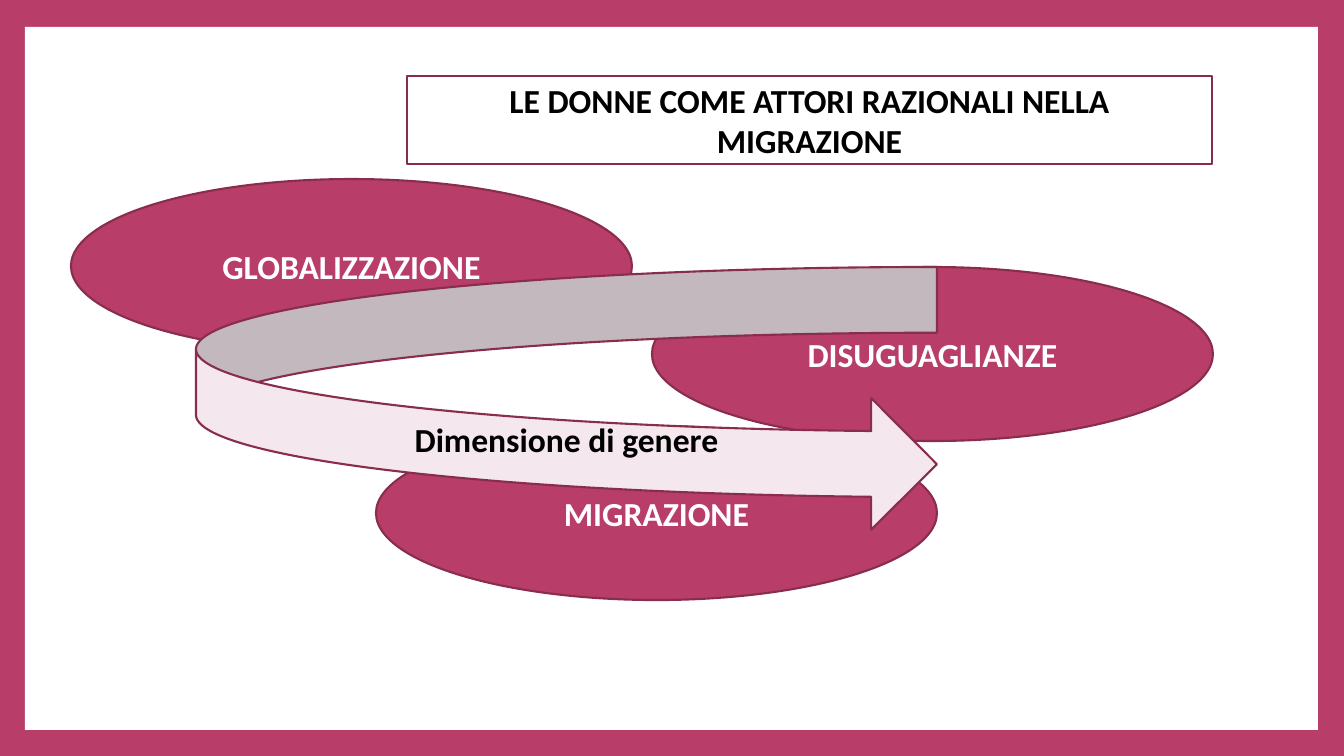
from pptx import Presentation
from pptx.dml.color import RGBColor
from pptx.enum.shapes import MSO_SHAPE as Preset
from pptx.enum.text import MSO_ANCHOR as Anchor, MSO_AUTO_SIZE as AutoSize, PP_ALIGN as Align
from pptx.util import Emu, Pt

EMU_PER_PX = 914400 / 100.8
ROSE, PLUM, BLUSH, WHITE, BLACK = "B83D68", "882D4D", "F4E7ED", "FFFFFF", "000000"
OVAL_WIDTH, OVAL_HEIGHT = 561, 174


def px(length):
    """Turn a length in px into EMU."""
    return Emu(round(length * EMU_PER_PX))


def paint(fill, colour):
    """Give a fill one solid colour."""
    fill.solid()
    fill.fore_color.rgb = RGBColor.from_string(colour)


def outline(shape):
    """Draw the plum outline shared by the parts of the diagram."""
    paint(shape.line.fill, PLUM)
    shape.line.width = Pt(1.5)


def write(shape, wording, colour, drop=0):
    """Centre bold wording in a shape, lowered by drop px."""
    frame = shape.text_frame
    frame.word_wrap = True
    frame.auto_size = AutoSize.NONE
    frame.vertical_anchor = Anchor.MIDDLE
    frame.margin_top = px(5 + 2 * drop)
    frame.margin_bottom = px(5)
    line = frame.paragraphs[0]
    line.alignment = Align.CENTER
    run = line.add_run()
    run.text = wording
    run.font.name = "Calibri"
    run.font.size = Pt(24)
    run.font.bold = True
    paint(run.font.fill, colour)


def add_preset(slide, preset, box, colour):
    """Add a flat filled preset shape in a px box."""
    shape = slide.shapes.add_shape(preset, *map(px, box))
    shape.shadow.inherit = False
    paint(shape.fill, colour)
    return shape


def add_frame(slide, box):
    """Lay a white panel over the rose background."""
    paint(slide.background.fill, ROSE)
    panel = add_preset(slide, Preset.RECTANGLE, box, WHITE)
    panel.line.fill.background()


def add_title(slide, box):
    """Place the outlined title in front of the panel."""
    title = slide.shapes.title
    title.left, title.top, title.width, title.height = map(px, box)
    paint(title.fill, WHITE)
    outline(title)
    write(title, "LE DONNE COME ATTORI RAZIONALI NELLA MIGRAZIONE", BLACK)
    slide.shapes._spTree.append(title._element)


def add_diagram(slide, left, top):
    """Place three ovals and the gender arrow that sweeps across them."""
    ovals = [
        ("GLOBALIZZAZIONE", 0, 0),
        ("MIGRAZIONE", 305, 247),
        ("DISUGUAGLIANZE", 581, 88),
    ]
    for theme, right, down in ovals:
        box = (left + right, top + down, OVAL_WIDTH, OVAL_HEIGHT)
        oval = add_preset(slide, Preset.OVAL, box, ROSE)
        outline(oval)
        write(oval, theme, WHITE)
    sweep = (left + 125, top + 88, 741, 263)
    arrow = add_preset(slide, Preset.CURVED_RIGHT_ARROW, sweep, BLUSH)
    outline(arrow)
    write(arrow, "Dimensione di genere", BLACK, drop=41)


def main():
    """Build and save the slide."""
    deck = Presentation()
    deck.slide_width, deck.slide_height = px(1344), px(756)
    slide = deck.slides.add_slide(deck.slide_layouts[5])
    add_frame(slide, (25, 27, 1293, 703))
    add_diagram(slide, 71, 179)
    add_title(slide, (407, 76, 805, 88))
    deck.save("out.pptx")


if __name__ == "__main__":
    main()
